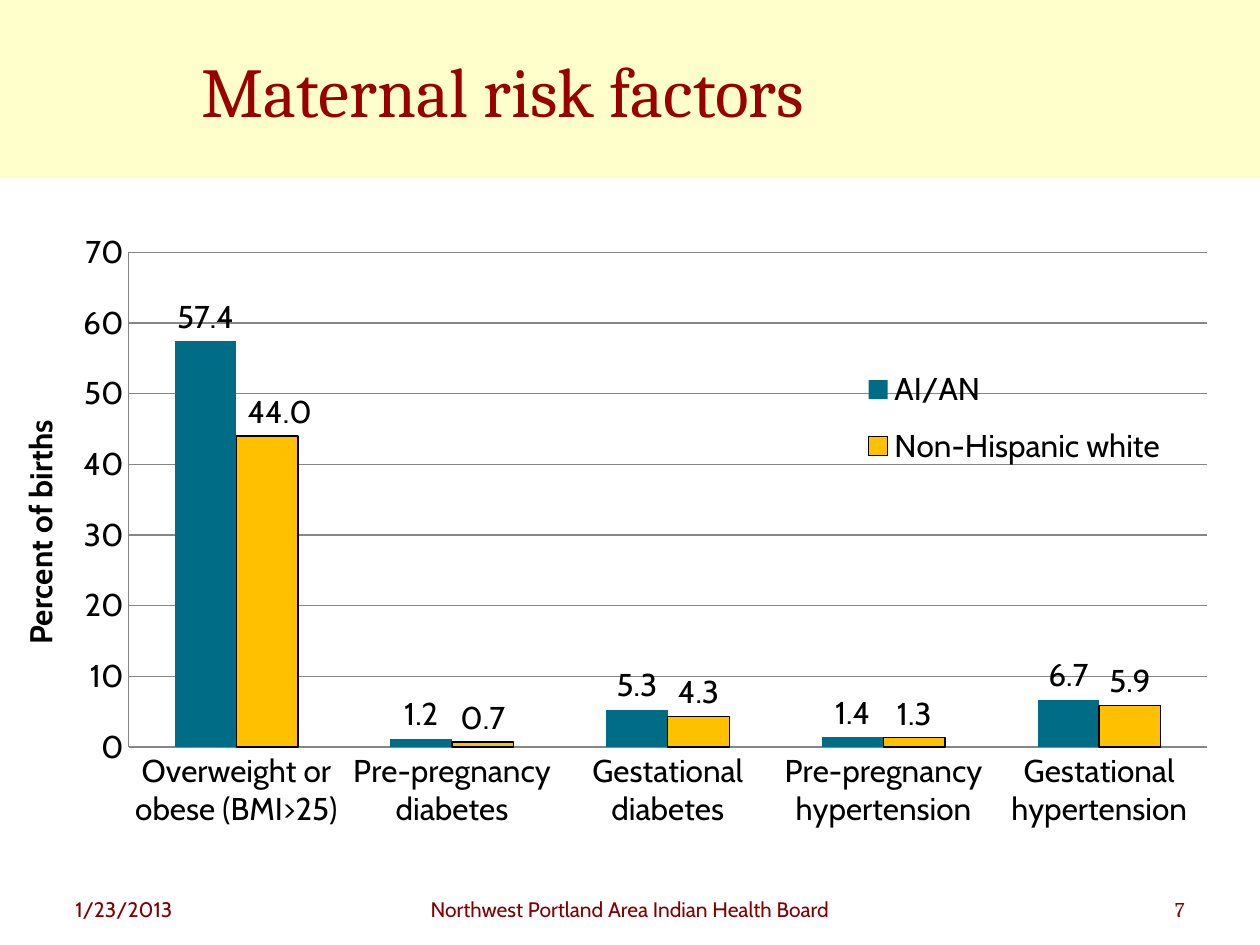
from dataclasses import dataclass

from lxml import etree
from pptx import Presentation
from pptx.chart.data import CategoryChartData
from pptx.dml.color import RGBColor
from pptx.enum.chart import XL_CHART_TYPE, XL_LABEL_POSITION, XL_LEGEND_POSITION, XL_TICK_MARK
from pptx.enum.shapes import MSO_SHAPE
from pptx.enum.text import MSO_ANCHOR, PP_ALIGN
from pptx.oxml.ns import qn
from pptx.util import Pt

COLUMNS = XL_CHART_TYPE.COLUMN_CLUSTERED
OUTSIDE_END = XL_LABEL_POSITION.OUTSIDE_END
LEGEND_RIGHT = XL_LEGEND_POSITION.RIGHT
NO_TICKS = XL_TICK_MARK.NONE
RECTANGLE = MSO_SHAPE.RECTANGLE
MIDDLE = MSO_ANCHOR.MIDDLE
LEFT, CENTER, RIGHT = PP_ALIGN.LEFT, PP_ALIGN.CENTER, PP_ALIGN.RIGHT


@dataclass(frozen=True)
class Theme:
    band = RGBColor(0xFF, 0xFF, 0xCC)
    title = RGBColor(0x99, 0x00, 0x00)
    footer = RGBColor(0x80, 0x00, 0x00)
    text = RGBColor(0x00, 0x00, 0x00)
    grid = RGBColor(0x86, 0x86, 0x86)
    teal = RGBColor(0x01, 0x6C, 0x85)
    gold = RGBColor(0xFF, 0xC0, 0x00)
    serif = "Cambria"
    sans = "Cabin"
    title_size = Pt(40)
    chart_size = Pt(18)
    footer_size = Pt(12)


theme = Theme()


def add_run(paragraph, text, font_name, size, color):
    run = paragraph.add_run()
    run.text = text
    run.font.name = font_name
    run.font.size = size
    run.font.color.rgb = color


def set_layout(parent, index, inner=False, **fractions):
    """Place a chart part by fractions of the chart's size; index is its place in the XML."""
    for old_layout in parent.findall(qn("c:layout")):
        parent.remove(old_layout)
    layout = etree.Element(qn("c:layout"))
    parent.insert(index, layout)
    manual = etree.SubElement(layout, qn("c:manualLayout"))
    settings = {"layoutTarget": "inner"} if inner else {}
    if "w" in fractions:
        settings.update(xMode="edge", yMode="edge")
    settings.update(fractions)
    for name, value in settings.items():
        etree.SubElement(manual, qn(f"c:{name}")).set("val", str(value))
    return manual


presentation = Presentation()
presentation.slide_width, presentation.slide_height = Pt(720), Pt(540)
slide = presentation.slides.add_slide(presentation.slide_layouts[5])

# Title band
band = slide.shapes.add_shape(RECTANGLE, Pt(0), Pt(0), Pt(720), Pt(102))
band.shadow.inherit = False
band.fill.solid()
band.fill.fore_color.rgb = theme.band
band.line.fill.background()
slide.shapes._spTree.insert(2, band._element)

title = slide.shapes.title
title.left, title.top, title.width, title.height = Pt(108), Pt(6), Pt(576), Pt(90)
title.text_frame.vertical_anchor = MIDDLE
paragraph = title.text_frame.paragraphs[0]
paragraph.alignment = LEFT
add_run(paragraph, "Maternal risk factors", theme.serif, theme.title_size, theme.title)

# Footer
footers = [
    ("1/23/2013", 36, 168, LEFT, theme.sans),
    ("Northwest Portland Area Indian Health Board", 210, 300, CENTER, theme.sans),
    ("7", 516, 168, RIGHT, theme.serif),
]
for text, left, width, alignment, font_name in footers:
    footer = slide.shapes.add_textbox(Pt(left), Pt(509), Pt(width), Pt(31))
    footer.text_frame.word_wrap = True
    paragraph = footer.text_frame.paragraphs[0]
    paragraph.alignment = alignment
    add_run(paragraph, text, font_name, theme.footer_size, theme.footer)

# Chart
chart_data = CategoryChartData(number_format="0.0")
chart_data.categories = [
    "Overweight or obese (BMI>25)",
    "Pre-pregnancy diabetes",
    "Gestational diabetes",
    "Pre-pregnancy hypertension",
    "Gestational hypertension",
]
chart_data.add_series("AI/AN", [57.4, 1.2, 5.3, 1.4, 6.7])
chart_data.add_series("Non-Hispanic white", [44.0, 0.7, 4.3, 1.3, 5.9])
chart = slide.shapes.add_chart(COLUMNS, Pt(0), Pt(126), Pt(720), Pt(396), chart_data).chart
chart.has_title = False
chart.font.name = theme.sans
chart.font.size = theme.chart_size
chart.font.color.rgb = theme.text
set_layout(chart._chartSpace.chart.plotArea, 0, inner=True, x=0.102, y=0.046, w=0.856, h=0.714)

value_axis, category_axis = chart.value_axis, chart.category_axis
value_axis.minimum_scale, value_axis.maximum_scale, value_axis.major_unit = 0, 70, 10
value_axis.tick_labels.number_format = "0"
value_axis.tick_labels.number_format_is_linked = False
value_axis.has_major_gridlines = True
for axis in (value_axis, category_axis):
    axis.major_tick_mark = axis.minor_tick_mark = NO_TICKS
for line in (value_axis.major_gridlines.format.line, value_axis.format.line, category_axis.format.line):
    line.color.rgb = theme.grid
    line.width = Pt(0.75)

paragraph = value_axis.axis_title.text_frame.paragraphs[0]
add_run(paragraph, "Percent of births", theme.sans, theme.chart_size, theme.text)
paragraph.runs[0].font.bold = True
set_layout(value_axis.axis_title._element, 1, xMode="edge", yMode="edge", x=0.01, y=0.28)

chart.has_legend = True
chart.legend.position = LEGEND_RIGHT
chart.legend.include_in_layout = False
set_layout(chart.legend._element, 1, x=0.67, y=0.19, w=0.27, h=0.19)

plot = chart.plots[0]
plot.gap_width, plot.overlap = 150, 0
plot.vary_by_categories = False
for series, color in zip(plot.series, (theme.teal, theme.gold)):
    series.format.fill.solid()
    series.format.fill.fore_color.rgb = color
    labels = series.data_labels
    labels.show_value = True
    labels.position = OUTSIDE_END
    labels.number_format = "0.0"
    labels.number_format_is_linked = False

white_series = plot.series[1]
white_series.format.line.color.rgb = theme.text
white_series.format.line.width = Pt(0.75)

# The first gold label sits a little to the right, clear of its taller neighbour
first_label = white_series.points[0].data_label
first_label.position = OUTSIDE_END
label_element = white_series.data_labels._element.find(qn("c:dLbl"))
set_layout(label_element, 1, x=0.01, y=0)
number_format = etree.Element(qn("c:numFmt"), formatCode="0.0", sourceLinked="0")
label_element.insert(2, number_format)

presentation.save("out.pptx")
